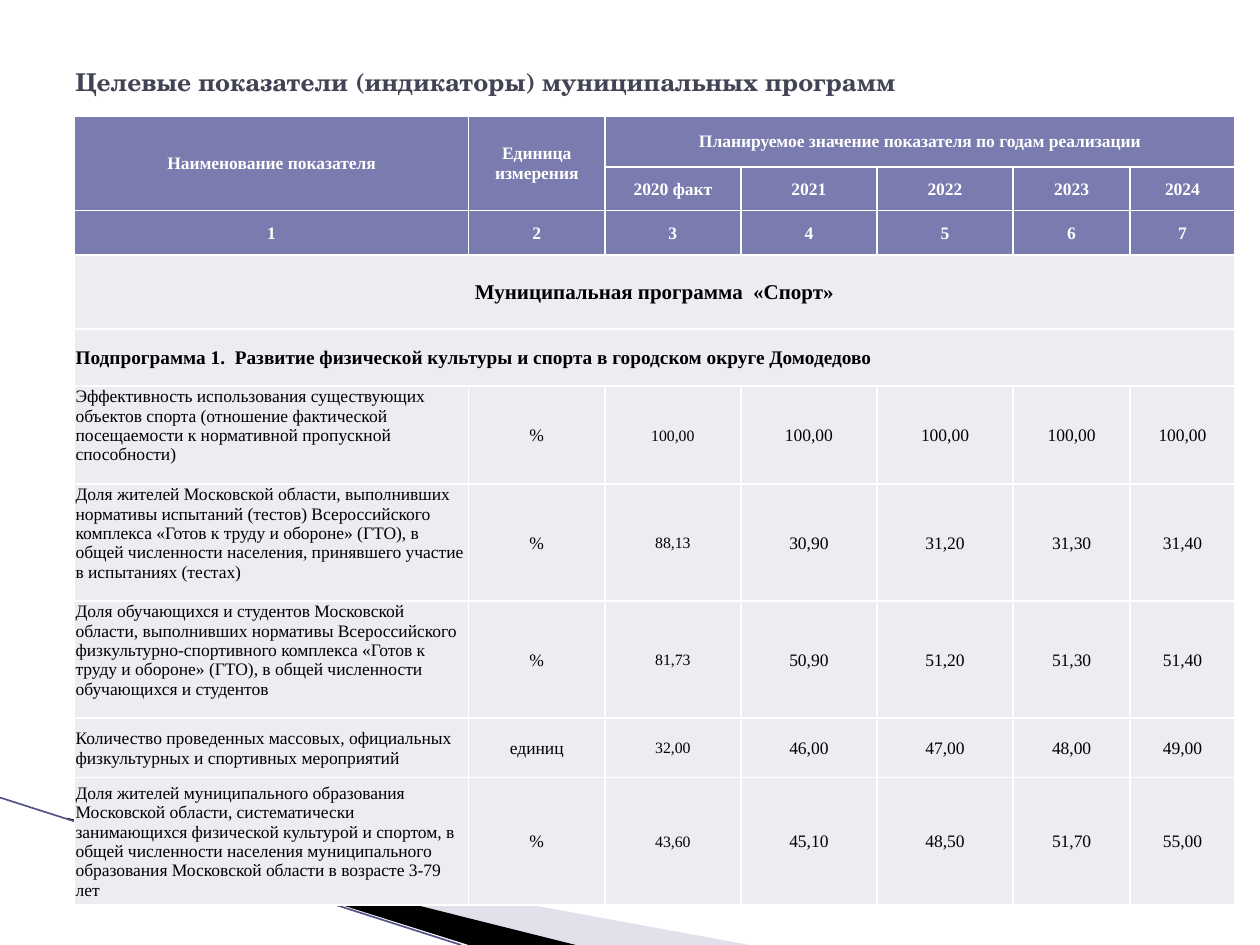
from pptx import Presentation
from pptx import util as u
from pptx.dml.color import RGBColor
from pptx.enum import shapes, text
from pptx.oxml import parse_xml
from pptx.oxml.ns import nsdecls
from lxml import etree

THEME = {
    "title": {"name": "TeX Gyre Schola", "size": 14, "bold": True, "color": "424456"},
    "header": {"name": "Times New Roman", "size": 10, "bold": True, "color": "FFFFFF"},
    "program": {"name": "Times New Roman", "size": 12, "bold": True, "color": "000000"},
    "subprogram": {"name": "Times New Roman", "size": 11, "bold": True, "color": "000000"},
    "body": {"name": "Times New Roman", "size": 10, "bold": False, "color": "000000"},
    "fact": {"name": "Times New Roman", "size": 9, "bold": False, "color": "000000"},
    "header_fill": "7A7BAE", "body_fill": "ECECF2", "border": "FFFFFF",
    "pale_wedge": "B6B6D1", "dark_wedge": "000000", "edge_line": "53548A",
}
SIDES = ("lnL", "lnR", "lnT", "lnB")

deck = Presentation()
deck.slide_width, deck.slide_height = u.Inches(10), u.Inches(7.5)
page = deck.slides.add_slide(deck.slide_layouts[6])


def spot(across, down):
    """Turn percentages of the slide's width and height into lengths."""
    return round(deck.slide_width * across / 100), round(deck.slide_height * down / 100)


def write(para, words, style):
    span = para.add_run()
    span.text = words
    look = THEME[style]
    formats = {"name": look["name"], "size": u.Pt(look["size"]), "bold": look["bold"]}
    for key, value in formats.items():
        setattr(span.font, key, value)
    span.font.color.rgb = RGBColor.from_string(look["color"])


# Decorative wedges in the lower left corner
wedges = [
    ("pale_wedge", 40, [(5.5, 86.8), (59.5, 100), (45.6, 100), (5.5, 86.67)]),
    ("dark_wedge", 100, [(5.3, 86.53), (45.7, 100), (37.2, 100), (5.4, 86.67)]),
]
for color, opacity, corners in wedges:
    points = [spot(*corner) for corner in corners]
    builder = page.shapes.build_freeform(*points[0], scale=1.0)
    builder.add_line_segments(points[1:], close=True)
    wedge = builder.convert_to_shape()
    wedge.shadow.inherit = False
    wedge.line.fill.background()
    wedge.fill.solid()
    wedge.fill.fore_color.rgb = RGBColor.from_string(THEME[color])
    if opacity < 100:
        tint = wedge.fill._xPr.solidFill[0]
        tint.append(parse_xml(f'<a:alpha {nsdecls("a")} val="{opacity * 1000}"/>'))

# Thin line along the wedges
edge = page.shapes.add_connector(shapes.MSO_CONNECTOR.STRAIGHT, *spot(0, 84.4), *spot(36.6, 100))
edge.line.color.rgb = RGBColor.from_string(THEME["edge_line"])
edge.line.width = u.Pt(0.95)
edge._element.spPr.append(parse_xml(f'<a:effectLst {nsdecls("a")}/>'))

# Title
box = page.shapes.add_textbox(*spot(5, 4), *spot(90, 9.2))
box.text_frame.word_wrap = True
box.text_frame.vertical_anchor = text.MSO_ANCHOR.MIDDLE
write(box.text_frame.paragraphs[0], "Целевые показатели (индикаторы) муниципальных программ", "title")

# Table content: one list per row, empty where a merged cell continues
rows = [
    ["Наименование показателя", "Единица измерения",
     "Планируемое значение показателя по годам реализации", "", "", "", ""],
    ["", "", "2020 факт", "2021", "2022", "2023", "2024"],
    ["1", "2", "3", "4", "5", "6", "7"],
    ["Муниципальная программа  «Спорт»"] + [""] * 6,
    ["Подпрограмма 1.  Развитие физической культуры и спорта в городском округе Домодедово"] + [""] * 6,
    ["Эффективность использования существующих объектов спорта (отношение фактической "
     "посещаемости к нормативной пропускной способности)",
     "%", "100,00", "100,00", "100,00", "100,00", "100,00"],
    ["Доля жителей Московской области, выполнивших нормативы испытаний (тестов) Всероссийского "
     "комплекса «Готов к труду и обороне» (ГТО), в общей численности населения, принявшего "
     "участие в испытаниях (тестах)",
     "%", "88,13", "30,90", "31,20", "31,30", "31,40"],
    ["Доля обучающихся и студентов Московской области, выполнивших нормативы Всероссийского "
     "физкультурно-спортивного комплекса «Готов к труду и обороне» (ГТО), в общей численности "
     "обучающихся и студентов",
     "%", "81,73", "50,90", "51,20", "51,30", "51,40"],
    ["Количество проведенных массовых, официальных физкультурных и спортивных мероприятий",
     "единиц", "32,00", "46,00", "47,00", "48,00", "49,00"],
    ["Доля жителей муниципального образования  Московской области, систематически занимающихся "
     "физической культурой и спортом, в общей численности населения муниципального образования "
     "Московской области в возрасте 3-79 лет",
     "%", "43,60", "45,10", "48,50", "51,70", "55,00"],
]
widths = [31.3, 10.8, 10.8, 10.8, 10.8, 9.3, 8.3]
heights = [5.4, 4.23, 4.71, 7.88, 6.03, 10.37, 12.38, 12.38, 6.3, 12.33]
merges = [((0, 0), (1, 0)), ((0, 1), (1, 1)), ((0, 2), (0, 6)), ((3, 0), (3, 6)), ((4, 0), (4, 6))]
row_styles = ["header"] * 3 + ["program", "subprogram"] + ["body"] * 5
top_rows = (5, 6, 7)

# Table grid
table = page.shapes.add_table(len(rows), len(widths), *spot(5.9, 12.27),
                              *spot(sum(widths), sum(heights))).table
for column, share in zip(table.columns, widths):
    column.width = spot(share, 0)[0]
for row, share in zip(table.rows, heights):
    row.height = spot(0, share)[1]
for first, last in merges:
    table.cell(*first).merge(table.cell(*last))

# Table cells
for r, (entries, row_style) in enumerate(zip(rows, row_styles)):
    for c, words in enumerate(entries):
        cell = table.cell(r, c)
        margin = u.Inches(0.01)
        at_top = c == 0 and r in top_rows
        formats = {
            "margin_left": margin, "margin_right": margin, "margin_top": margin, "margin_bottom": 0,
            "vertical_anchor": text.MSO_ANCHOR.TOP if at_top else text.MSO_ANCHOR.MIDDLE,
        }
        for key, value in formats.items():
            setattr(cell, key, value)
        properties = cell._tc.get_or_add_tcPr()
        for side in SIDES:
            properties.append(etree.fromstring(
                f'<a:{side} {nsdecls("a")} w="12700"><a:solidFill>'
                f'<a:srgbClr val="{THEME["border"]}"/></a:solidFill></a:{side}>'))
        cell.fill.solid()
        fill = "header_fill" if row_style == "header" else "body_fill"
        cell.fill.fore_color.rgb = RGBColor.from_string(THEME[fill])
        if words:
            para = cell.text_frame.paragraphs[0]
            left = c == 0 and row_style in ("subprogram", "body")
            para.alignment = text.PP_ALIGN.LEFT if left else text.PP_ALIGN.CENTER
            write(para, words, "fact" if row_style == "body" and c == 2 else row_style)

deck.save("out.pptx")
